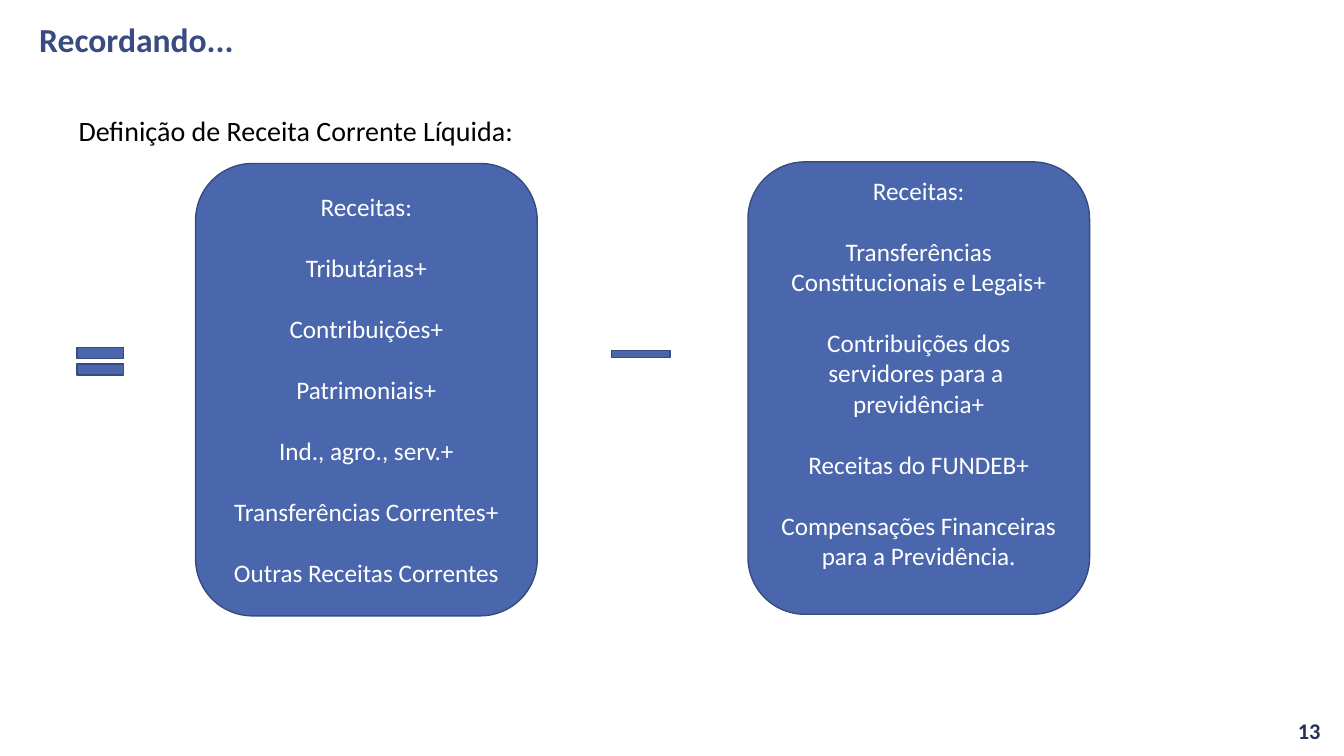
"""Builds the slide that defines net current revenue."""
from dataclasses import dataclass

from pptx import Presentation
from pptx.dml.color import RGBColor
from pptx.enum.shapes import MSO_SHAPE
from pptx.enum.text import MSO_ANCHOR, PP_ALIGN
from pptx.util import Cm, Pt

ROUNDED, MINUS, EQUAL = MSO_SHAPE.ROUNDED_RECTANGLE, MSO_SHAPE.MATH_MINUS, MSO_SHAPE.MATH_EQUAL
TOP, MIDDLE = MSO_ANCHOR.TOP, MSO_ANCHOR.MIDDLE
LEFT, CENTER, RIGHT = PP_ALIGN.LEFT, PP_ALIGN.CENTER, PP_ALIGN.RIGHT


@dataclass(frozen=True)
class Theme:
    font: str = "Calibri"
    title: str = "384C81"
    body: str = "000000"
    number: str = "253356"
    fill: str = "4A66AC"
    line: str = "374B7F"
    card_text: str = "FFFFFF"
    title_size: int = 24
    body_size: int = 20
    card_size: int = 18
    number_size: int = 16
    group_gap: int = 22


class SlideBuilder:
    def __init__(self, slide, theme):
        self.s, self.theme = slide, theme

    def run(self, p, text, size, color, bold=False):
        r = p.add_run()
        r.text = text
        r.font.name, r.font.size, r.font.bold = self.theme.font, Pt(size), bold
        r.font.color.rgb = RGBColor.from_string(color)

    def label(self, box, text, size, color, bold=False, anchor=MIDDLE, align=LEFT, spacing=1.0):
        tf = self.s.shapes.add_textbox(*map(Cm, box)).text_frame
        tf.word_wrap, tf.vertical_anchor = True, anchor
        p = tf.paragraphs[0]
        p.alignment, p.line_spacing = align, spacing
        self.run(p, text, size, color, bold)

    def shape(self, kind, box):
        sp = self.s.shapes.add_shape(kind, *map(Cm, box))
        sp.shadow.inherit = False
        sp.fill.solid()
        sp.fill.fore_color.rgb = RGBColor.from_string(self.theme.fill)
        sp.line.color.rgb = RGBColor.from_string(self.theme.line)
        sp.line.width = Pt(1)
        return sp

    def card(self, box, groups, bottom=0.13):
        tf = self.shape(ROUNDED, box).text_frame
        tf.word_wrap, tf.vertical_anchor, tf.margin_bottom = True, MIDDLE, Cm(bottom)
        for i, group in enumerate(groups):
            for j, text in enumerate(group):
                p = tf.add_paragraph() if i or j else tf.paragraphs[0]
                p.alignment = CENTER
                p.space_before = Pt(self.theme.group_gap if i and not j else 0)
                self.run(p, text, self.theme.card_size, self.theme.card_text)


INCOME = [
    ["Receitas:"],
    ["Tributárias+"],
    ["Contribuições+"],
    ["Patrimoniais+"],
    ["Ind., agro., serv.+"],
    ["Transferências Correntes+"],
    ["Outras Receitas Correntes"],
]
DEDUCTIONS = [
    ["Receitas:"],
    ["Transferências Constitucionais e Legais+"],
    ["Contribuições dos servidores para a ", "previdência+"],
    ["Receitas do FUNDEB+"],
    ["Compensações Financeiras para a Previdência."],
]


def main():
    prs = Presentation()
    prs.slide_width, prs.slide_height = Cm(33.87), Cm(19.05)
    theme = Theme()
    b = SlideBuilder(prs.slides.add_slide(prs.slide_layouts[6]), theme)
    b.label((0.74, -0.79, 32.41, 3.68), "Recordando...", theme.title_size, theme.title,
            bold=True, spacing=0.9)
    b.label((1.73, 2.82, 30.4, 12.09), "Definição de Receita Corrente Líquida:",
            theme.body_size, theme.body, anchor=TOP, spacing=0.9)
    b.label((25.91, 17.91, 7.62, 1.02), "13", theme.number_size, theme.number,
            bold=True, align=RIGHT)
    b.card((4.93, 4.12, 8.61, 11.4), INCOME)
    b.card((18.85, 4.08, 8.61, 11.4), DEDUCTIONS, bottom=0.9)
    b.shape(MINUS, (15.14, 8.53, 2.01, 0.79))
    b.shape(EQUAL, (1.73, 8.51, 1.6, 1.19))
    prs.save("out.pptx")


if __name__ == "__main__":
    main()
